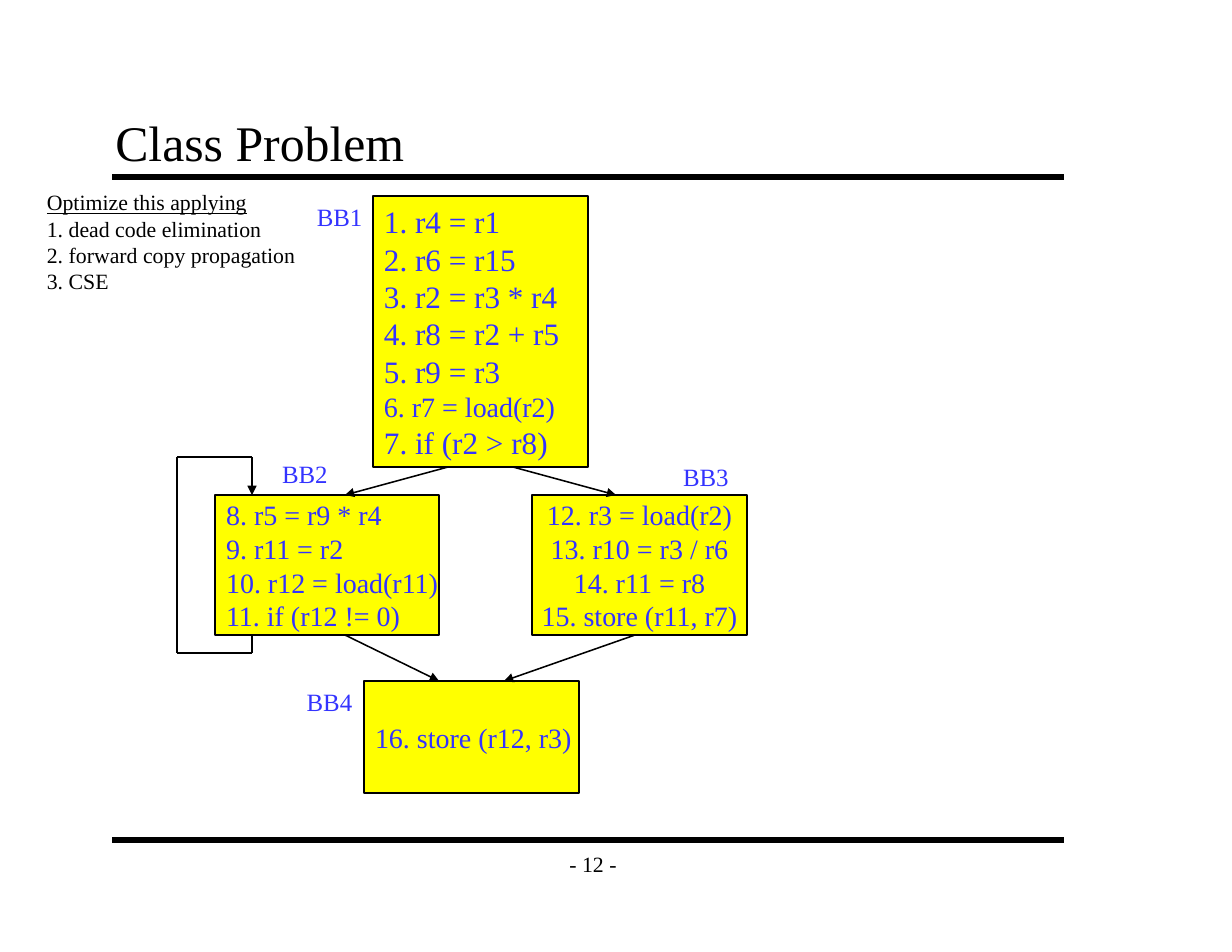
from itertools import pairwise

from lxml.etree import SubElement
from pptx import Presentation
from pptx.dml.color import RGBColor
from pptx.enum.shapes import MSO_CONNECTOR as Connector, MSO_SHAPE as Shape
from pptx.enum.text import MSO_ANCHOR as Anchor, PP_ALIGN as Align
from pptx.oxml.ns import qn
from pptx.util import Inches, Pt


def color(hex_code):
    return RGBColor.from_string(hex_code)


class FlowSlide:
    """Draws the blocks, labels and edges of a control flow graph on one slide."""

    font, ink, code_ink, block_fill = "Times New Roman", "000000", "3333FF", "FFFF00"

    def __init__(self, deck):
        self.slide = deck.slides.add_slide(deck.slide_layouts[6])

    def fill_text(self, frame, lines, size, ink, align=Align.LEFT, anchor=Anchor.TOP,
                  inset=(0.1, 0.05), wrap=False, sizes=None, underlined=()):
        across, down = map(Inches, inset)
        layout = {"margin_left": across, "margin_right": across, "margin_top": down,
                  "margin_bottom": down, "vertical_anchor": anchor, "word_wrap": wrap}
        for name, value in layout.items():
            setattr(frame, name, value)
        for number, line in enumerate(lines):
            paragraph = frame.paragraphs[0] if number == 0 else frame.add_paragraph()
            paragraph.alignment = align
            run = paragraph.add_run()
            run.text = line
            style = {"name": self.font, "size": Pt((sizes or {}).get(number, size)),
                     "underline": number in underlined}
            for name, value in style.items():
                setattr(run.font, name, value)
            run.font.color.rgb = color(ink)

    def text(self, at, lines, size, ink=ink, **style):
        box = self.slide.shapes.add_textbox(*map(Inches, at))
        self.fill_text(box.text_frame, lines, size, ink, **style)

    def block(self, at, lines, size=18, **style):
        rectangle = self.slide.shapes.add_shape(Shape.RECTANGLE, *map(Inches, at))
        rectangle.shadow.inherit = False
        rectangle.fill.solid()
        rectangle.fill.fore_color.rgb = color(self.block_fill)
        rectangle.line.color.rgb = color(self.ink)
        rectangle.line.width = Pt(1)
        self.fill_text(rectangle.text_frame, lines, size, self.code_ink,
                       anchor=Anchor.MIDDLE, **style)

    def line(self, start, end, width=1, arrow=False):
        edge = self.slide.shapes.add_connector(
            Connector.STRAIGHT, *map(Inches, (*start, *end)))
        edge.line.color.rgb = color(self.ink)
        edge.line.width = Pt(width)
        properties = edge._element.spPr
        if arrow:
            SubElement(properties.find(qn("a:ln")), qn("a:tailEnd"), type="triangle")
        SubElement(properties, qn("a:effectLst"))


def main():
    deck = Presentation()
    deck.slide_width, deck.slide_height = Inches(11), Inches(8.5)
    flow = FlowSlide(deck)

    for rule_y in (1.58, 7.5):
        flow.line((1, rule_y), (9.5, rule_y), width=4)
    flow.text((4.92, 7.5, 0.75, 0.42), ["- 12 -"], 14, align=Align.CENTER,
              anchor=Anchor.MIDDLE, inset=(0.11, 0.06))
    flow.text((0.92, 0.92, 8.5, 0.67), ["Class Problem"], 32,
              anchor=Anchor.BOTTOM, inset=(0.11, 0.06), wrap=True)
    flow.text((0.32, 1.64, 2.44, 1.04),
              ["Optimize this applying", "1. dead code elimination",
               "2. forward copy propagation", "3. CSE"], 14, underlined=(0,))

    flow.block((3.33, 1.75, 1.92, 2.42),
               ["1. r4 = r1", "2. r6 = r15", "3. r2 = r3 * r4", "4. r8 = r2 + r5",
                "5. r9 = r3", "6. r7 = load(r2)", "7. if (r2 > r8)"], 20, sizes={5: 18})
    flow.block((1.92, 4.42, 2, 1.25),
               ["8. r5 = r9 * r4", "9. r11 = r2", "10. r12 = load(r11)",
                "11. if (r12 != 0)"])
    flow.block((4.75, 4.42, 1.92, 1.25),
               ["12. r3 = load(r2)", "13. r10 = r3 / r6", "14. r11 = r8",
                "15. store (r11, r7)"], align=Align.CENTER)
    flow.block((3.25, 6.08, 1.92, 1), ["16. store (r12, r3)"])

    branches = [((4, 4.17), (3.08, 4.42)), ((4.58, 4.17), (5.5, 4.42)),
                ((3.08, 5.67), (3.92, 6.08)), ((5.67, 5.67), (4.5, 6.08))]
    for start, end in branches:
        flow.line(start, end, arrow=True)

    loop = [(2.25, 5.67), (2.25, 5.83), (1.58, 5.83), (1.58, 4.08),
            (2.25, 4.08), (2.25, 4.42)]
    for start, end in pairwise(loop):
        flow.line(start, end, arrow=end == loop[-1])

    labels = {"BB1": (2.73, 1.75), "BB2": (2.42, 4.05),
              "BB3": (6, 4.07), "BB4": (2.64, 6.08)}
    for label, corner in labels.items():
        flow.text((*corner, 0.61, 0.37), [label], 16, flow.code_ink)

    deck.save("out.pptx")


if __name__ == "__main__":
    main()
